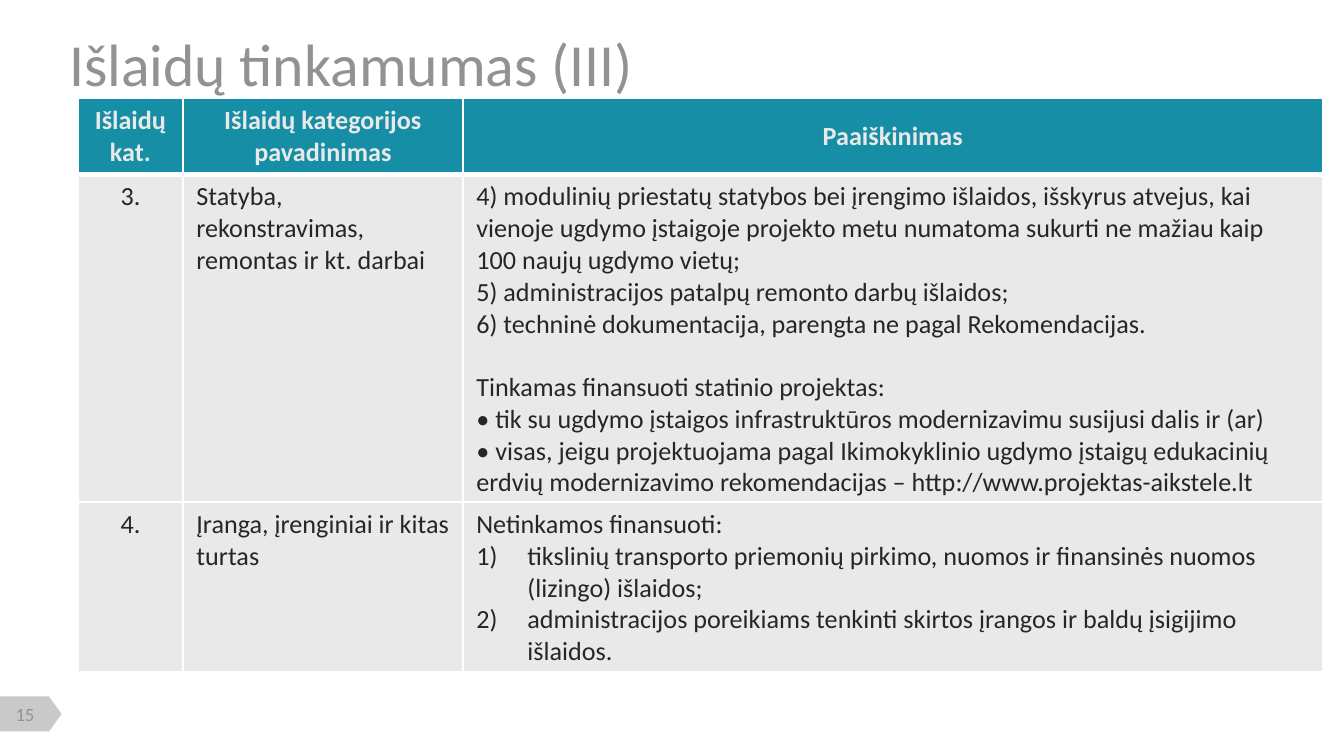
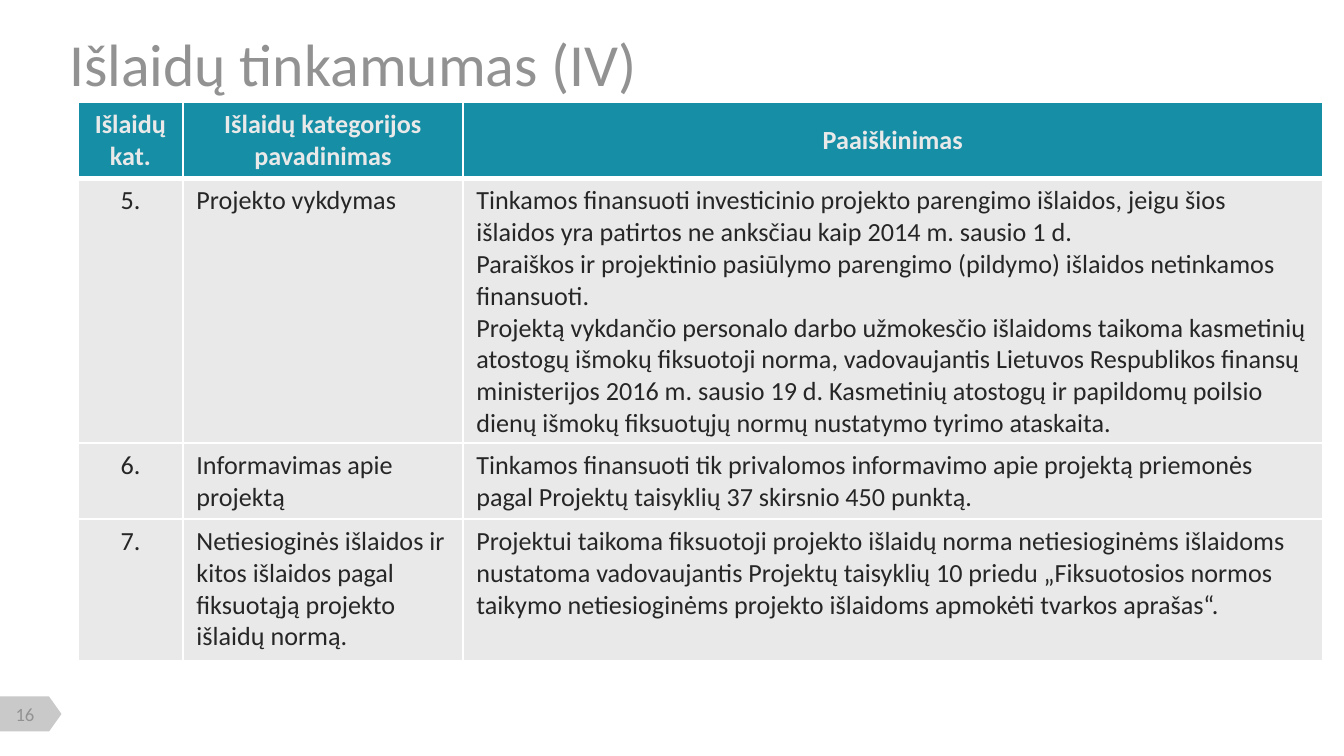
"""Builds two slides with tables of expense eligibility."""
import pptx
import pptx.dml.color
import pptx.enum.shapes
import pptx.enum.text
import pptx.oxml.ns
import pptx.util
from lxml import etree

PX_PER_INCH = 134.4
COLORS = {"page": "FFFFFF", "header": "168EA6", "header_text": "E9E9E9",
          "cell": "E9E9E9", "text": "262626", "muted": "929292",
          "tag": "C9C9C9", "border": "FFFFFF"}
LEFT = pptx.enum.text.PP_ALIGN.LEFT
CENTER = pptx.enum.text.PP_ALIGN.CENTER
TOP = pptx.enum.text.MSO_ANCHOR.TOP
MIDDLE = pptx.enum.text.MSO_ANCHOR.MIDDLE
TITLE = {"size": pptx.util.Pt(32), "bold": False, "name": "Calibri"}
NUMBER = {"size": pptx.util.Pt(10), "bold": False, "name": "Calibri"}
BODY = {"size": pptx.util.Pt(14), "bold": False, "name": "Calibri"}
HEADING = {**BODY, "bold": True}
COLUMN_WIDTHS = [105, 280, 860]
HEADINGS = ["Išlaidų kat.", "Išlaidų kategorijos pavadinimas", "Paaiškinimas"]
GAP = {"space_before": pptx.util.Pt(17)}
NUMBERED = {"numbered": True}

SLIDES = [
    {"title": "Išlaidų tinkamumas (III)", "title_width": 594, "number": "15",
     "top": 98, "height": 574, "row_heights": [75, 324, 168],
     "rows": [
         ("3.", "Statyba, rekonstravimas, remontas ir kt. darbai", [
             "4) modulinių priestatų statybos bei įrengimo išlaidos, išskyrus atvejus, "
             "kai vienoje ugdymo įstaigoje projekto metu numatoma sukurti ne mažiau "
             "kaip 100 naujų ugdymo vietų;",
             "5) administracijos patalpų remonto darbų išlaidos;",
             "6) techninė dokumentacija, parengta ne pagal Rekomendacijas.",
             ("Tinkamas finansuoti statinio projektas:", GAP),
             "• tik su ugdymo įstaigos infrastruktūros modernizavimu susijusi dalis "
             "ir (ar)",
             "• visas, jeigu projektuojama pagal Ikimokyklinio ugdymo įstaigų "
             "edukacinių erdvių modernizavimo rekomendacijas – "
             "http://www.projektas-aikstele.lt"]),
         ("4.", "Įranga, įrenginiai ir kitas turtas", [
             "Netinkamos finansuoti:",
             ("tikslinių transporto priemonių pirkimo, nuomos ir finansinės nuomos "
              "(lizingo) išlaidos;", NUMBERED),
             ("administracijos poreikiams tenkinti skirtos įrangos ir baldų "
              "įsigijimo išlaidos.", NUMBERED)])]},
    {"title": "Išlaidų tinkamumas (IV)", "title_width": 605, "number": "16",
     "top": 102, "height": 559, "row_heights": [60, 237, 60, 142],
     "rows": [
         ("5.", "Projekto vykdymas", [
             "Tinkamos finansuoti investicinio projekto parengimo išlaidos, jeigu "
             "šios išlaidos yra patirtos ne anksčiau kaip 2014 m. sausio 1 d.",
             "Paraiškos ir projektinio pasiūlymo parengimo (pildymo) išlaidos "
             "netinkamos finansuoti.",
             "Projektą vykdančio personalo darbo užmokesčio išlaidoms taikoma "
             "kasmetinių atostogų išmokų fiksuotoji norma, vadovaujantis Lietuvos "
             "Respublikos finansų ministerijos 2016 m. sausio 19 d. Kasmetinių "
             "atostogų ir papildomų poilsio dienų išmokų fiksuotųjų normų nustatymo "
             "tyrimo ataskaita."]),
         ("6.", "Informavimas apie projektą", [
             "Tinkamos finansuoti tik privalomos informavimo apie projektą priemonės "
             "pagal Projektų taisyklių 37 skirsnio 450 punktą."]),
         ("7.", "Netiesioginės išlaidos ir kitos išlaidos pagal fiksuotąją projekto "
                "išlaidų normą.", [
             "Projektui taikoma fiksuotoji projekto išlaidų norma netiesioginėms "
             "išlaidoms nustatoma vadovaujantis Projektų taisyklių 10 priedu "
             "„Fiksuotosios normos taikymo netiesioginėms projekto išlaidoms "
             "apmokėti tvarkos aprašas“."])]},
]


def px(length):
    """Turn pixels into EMU."""
    return pptx.util.Emu(round(length * 914400 / PX_PER_INCH))


def rgb(name):
    """Look up a named colour."""
    return pptx.dml.color.RGBColor.from_string(COLORS[name])


def set_values(target, values):
    """Set attributes from a dict."""
    for name, value in values.items():
        setattr(target, name, value)


def add_child(parent, tag, **attributes):
    """Append a DrawingML element with attributes."""
    return etree.SubElement(parent, pptx.oxml.ns.qn(tag), attributes)


def number_paragraph(para):
    """Give a paragraph a hanging automatic number."""
    properties = para._p.get_or_add_pPr()
    indent = px(51)
    properties.set("marL", str(indent))
    properties.set("indent", str(-indent))
    add_child(properties, "a:buFont", typeface="+mj-lt")
    add_child(properties, "a:buAutoNum", type="arabicParenR")


def write_text(frame, entries, font, color, align=LEFT):
    """Write one paragraph for each entry."""
    for index, entry in enumerate(entries):
        text, layout = entry if isinstance(entry, tuple) else (entry, {})
        para = frame.paragraphs[0] if index == 0 else frame.add_paragraph()
        para.alignment = align
        if layout is NUMBERED:
            number_paragraph(para)
        else:
            set_values(para, layout)
        span = para.add_run()
        span.text = text
        set_values(span.font, font)
        span.font.color.rgb = rgb(color)


def add_text(page, bounds, text, font, frame_values, align=LEFT):
    """Add a text box in the muted colour."""
    box = page.shapes.add_textbox(*map(px, bounds))
    set_values(box.text_frame, {"word_wrap": True, **frame_values})
    write_text(box.text_frame, [text], font, "muted", align)


def add_page_tag(page, number):
    """Add the page number on its arrow-shaped tag."""
    tag = page.shapes.add_shape(
        pptx.enum.shapes.MSO_SHAPE.FLOWCHART_OFFPAGE_CONNECTOR,
        *map(px, (13, 683, 35, 62)))
    tag.rotation = 270
    tag.shadow.inherit = False
    tag.fill.solid()
    tag.fill.fore_color.rgb = rgb("tag")
    tag.line.fill.background()
    margins = dict.fromkeys(
        ("margin_left", "margin_right", "margin_top", "margin_bottom"), 0)
    add_text(page, (3, 703, 44, 23), number, NUMBER,
             {**margins, "vertical_anchor": MIDDLE}, CENTER)


def add_borders(cell, bottom):
    """Draw the white borders of a cell."""
    properties = cell._tc.get_or_add_tcPr()
    for side, points in (("L", 1), ("R", 1), ("T", 1), ("B", bottom)):
        line = add_child(properties, f"a:ln{side}", w=str(pptx.util.Pt(points)))
        fill = add_child(line, "a:solidFill")
        add_child(fill, "a:srgbClr", val=COLORS["border"])


def fill_cell(cell, entries, is_header, align):
    """Style a cell and write its text."""
    add_borders(cell, 3 if is_header else 1)
    cell.fill.solid()
    cell.fill.fore_color.rgb = rgb("header" if is_header else "cell")
    margin_x, margin_y = pptx.util.Inches(0.1), pptx.util.Inches(0.05)
    set_values(cell, {"margin_left": margin_x, "margin_right": margin_x,
                      "margin_top": margin_y, "margin_bottom": margin_y,
                      "vertical_anchor": MIDDLE if is_header else TOP})
    write_text(cell.text_frame, entries, HEADING if is_header else BODY,
               "header_text" if is_header else "text", align)


def add_expense_table(page, content):
    """Add the table of expense categories."""
    rows = [HEADINGS, *content["rows"]]
    frame = page.shapes.add_table(
        len(rows), len(COLUMN_WIDTHS), px(78), px(content["top"]),
        px(sum(COLUMN_WIDTHS)), px(content["height"]))
    table = frame.table
    table.horz_banding = False
    for column, width in zip(table.columns, COLUMN_WIDTHS):
        column.width = px(width)
    for row, height in zip(table.rows, content["row_heights"]):
        row.height = px(height)
    frame.height = px(content["height"])
    for row_index, row in enumerate(rows):
        is_header = row_index == 0
        for column_index, value in enumerate(row):
            entries = value if isinstance(value, list) else [value]
            align = CENTER if is_header or column_index == 0 else LEFT
            fill_cell(table.cell(row_index, column_index), entries,
                      is_header, align)


def add_page(deck, content):
    """Add a slide with its tag, table and title."""
    page = deck.slides.add_slide(deck.slide_layouts[6])
    page.background.fill.solid()
    page.background.fill.fore_color.rgb = rgb("page")
    add_page_tag(page, content["number"])
    add_expense_table(page, content)
    add_text(page, (56, 20, content["title_width"], 82), content["title"],
             TITLE, {})


def main():
    """Build and save the deck."""
    deck = pptx.Presentation()
    set_values(deck, {"slide_width": px(1344), "slide_height": px(756)})
    for content in SLIDES:
        add_page(deck, content)
    deck.save("out.pptx")


if __name__ == "__main__":
    main()
